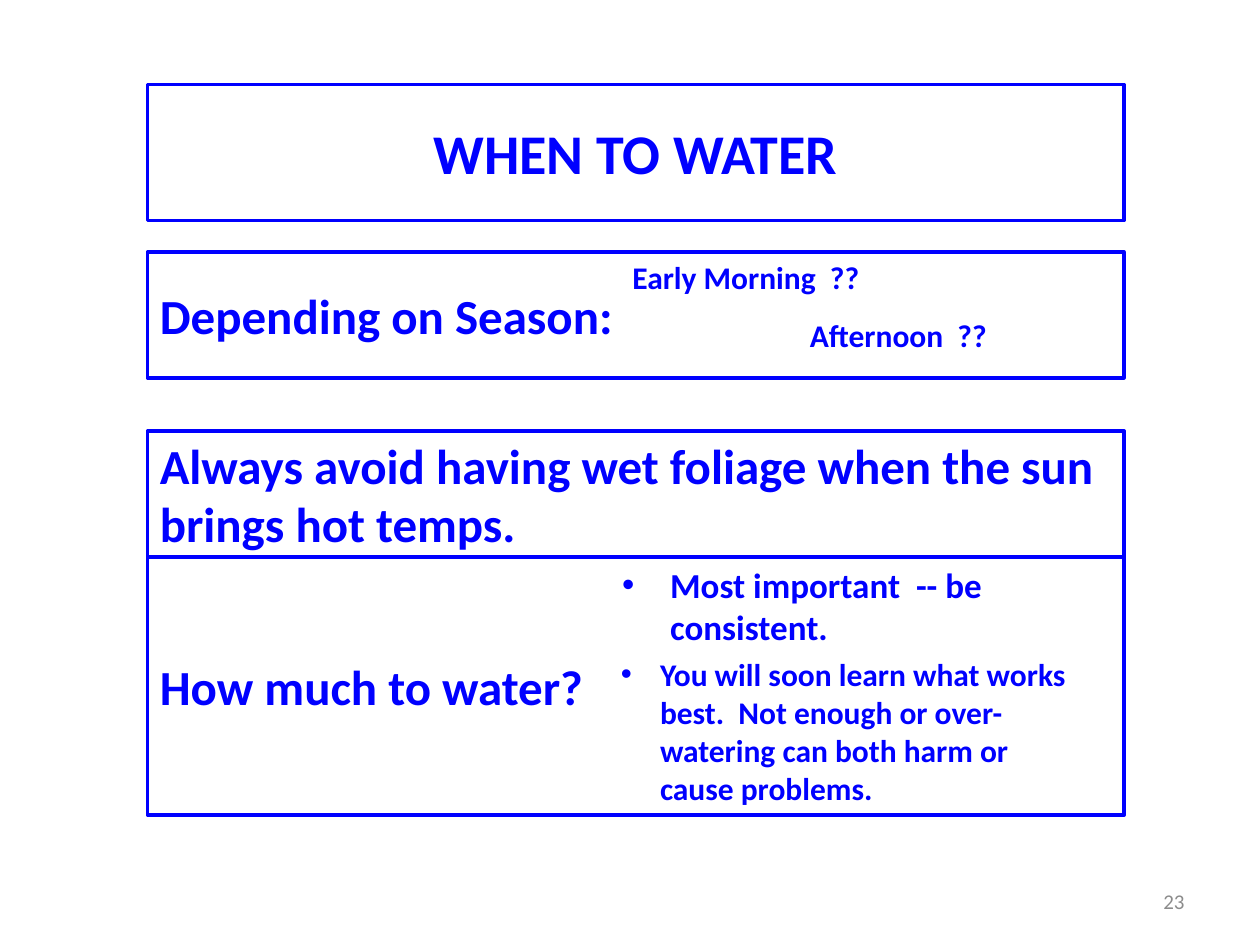
from dataclasses import dataclass

from lxml.etree import SubElement
from pptx import Presentation
from pptx.dml.color import RGBColor
from pptx.enum.shapes import MSO_SHAPE
from pptx.enum.text import MSO_ANCHOR, MSO_AUTO_SIZE, PP_ALIGN
from pptx.oxml.ns import qn
from pptx.util import Inches, Pt


@dataclass(frozen=True)
class Theme:
    font: str = "Calibri"
    blue: RGBColor = RGBColor(0x00, 0x00, 0xFF)
    white: RGBColor = RGBColor(0xFF, 0xFF, 0xFF)
    gray: RGBColor = RGBColor(0x8C, 0x8C, 0x8C)
    title: int = 32
    heading: int = 28
    key_point: int = 20
    body: int = 18
    page_number: int = 12
    border: int = 2


theme = Theme()


def write(shape, text, size, anchor, align=PP_ALIGN.LEFT, color=theme.blue, bold=True, indent=0):
    """Fill the shape with one paragraph; a non-zero indent in inches adds a bullet."""
    frame = shape.text_frame
    frame.word_wrap = True
    frame.auto_size = MSO_AUTO_SIZE.NONE
    frame.vertical_anchor = anchor
    paragraph = frame.paragraphs[0]
    paragraph.alignment = align
    if indent:
        properties = paragraph._p.get_or_add_pPr()
        properties.set("marL", str(Inches(indent)))
        properties.set("indent", str(-Inches(indent)))
        SubElement(properties, qn("a:buFont"), typeface="Arial")
        SubElement(properties, qn("a:buChar"), char="•")
    run = paragraph.add_run()
    run.text = text
    run.font.name = theme.font
    run.font.size = Pt(size)
    run.font.bold = bold
    run.font.color.rgb = color


def frame_panel(shape):
    shape.fill.solid()
    shape.fill.fore_color.rgb = theme.white
    shape.line.color.rgb = theme.blue
    shape.line.width = Pt(theme.border)


presentation = Presentation()
presentation.slide_width = Inches(10)
presentation.slide_height = Inches(7.5)
slide = presentation.slides.add_slide(presentation.slide_layouts[5])

panel_left, panel_width = Inches(1.17), Inches(7.75)

title = slide.shapes.title
title.left, title.top = panel_left, Inches(0.67)
title.width, title.height = panel_width, Inches(1.08)
frame_panel(title)
write(title, "WHEN TO WATER", theme.title, MSO_ANCHOR.MIDDLE, PP_ALIGN.CENTER)

# Bordered panels: top, height, heading
panels = [
    (2, 1, "Depending on Season:"),
    (3.42, 1, "Always avoid having wet foliage when the sun brings hot temps."),
    (4.42, 2.05, "How much to water?"),
]
for top, height, heading in panels:
    panel = slide.shapes.add_shape(
        MSO_SHAPE.RECTANGLE, panel_left, Inches(top), panel_width, Inches(height))
    panel.shadow.inherit = False
    frame_panel(panel)
    write(panel, heading, theme.heading, MSO_ANCHOR.MIDDLE)

# Answers beside the headings: left, top, width, height, size, bullet indent, text
answers = [
    (4.92, 2, 2.58, 0.4, theme.body, 0, "Early Morning  ??"),
    (6.33, 2.46, 1.67, 0.4, theme.body, 0, "Afternoon  ??"),
    (4.84, 4.42, 3.83, 0.77, theme.key_point, 0.38, "Most important  -- be consistent."),
    (4.83, 5.15, 3.75, 1.31, theme.body, 0.31,
     "You will soon learn what works best.  Not enough or over-watering "
     "can both harm or cause problems."),
]
for left, top, width, height, size, indent, text in answers:
    answer = slide.shapes.add_textbox(Inches(left), Inches(top), Inches(width), Inches(height))
    write(answer, text, size, MSO_ANCHOR.TOP, indent=indent)

page_number = slide.shapes.add_textbox(Inches(7.17), Inches(6.95), Inches(2.33), Inches(0.4))
write(page_number, "23", theme.page_number, MSO_ANCHOR.MIDDLE, PP_ALIGN.RIGHT, theme.gray, bold=False)

presentation.save("out.pptx")
